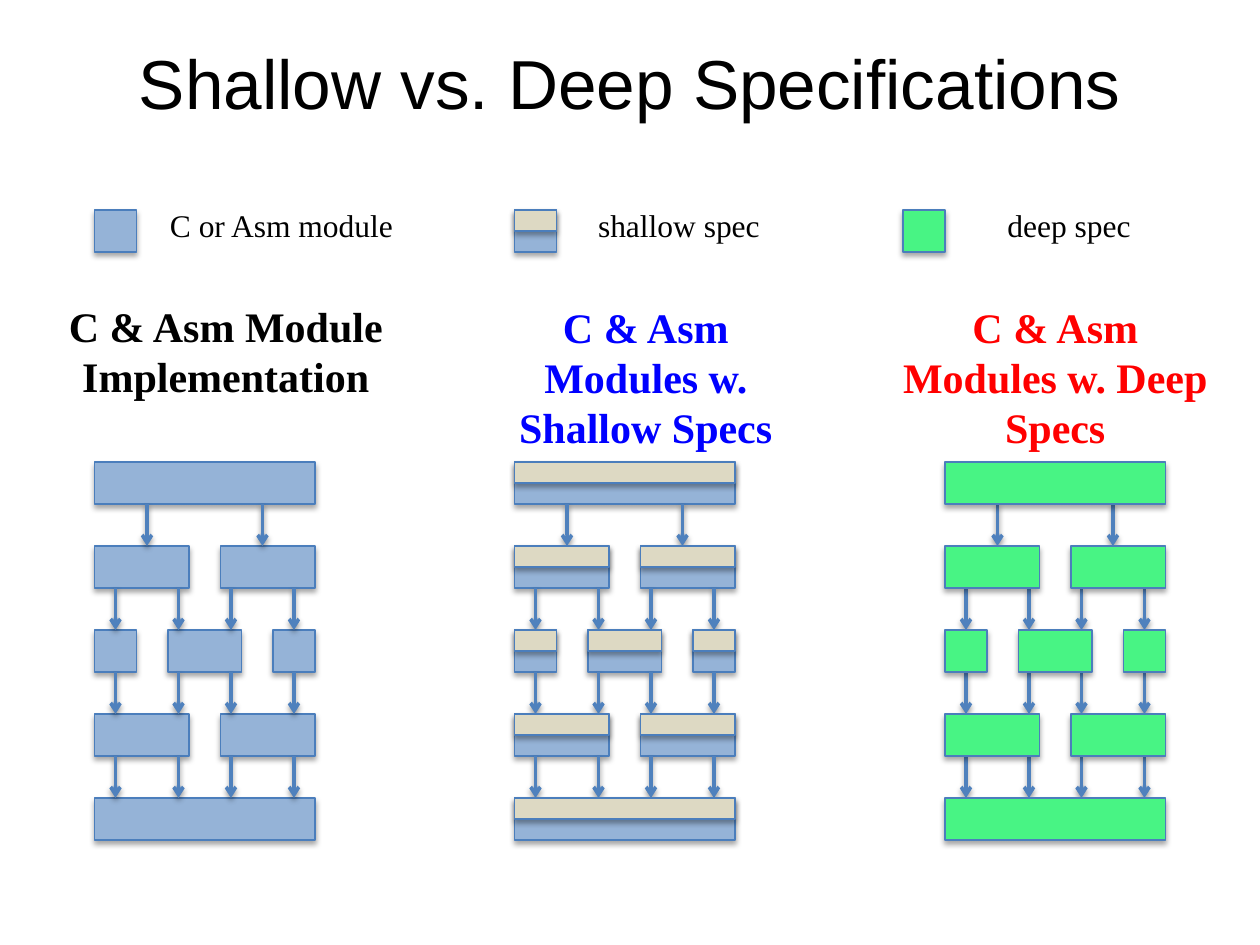
from lxml import etree
from pptx import Presentation
from pptx.dml.color import RGBColor
from pptx.enum.shapes import MSO_CONNECTOR as Connector, MSO_SHAPE as Shape
from pptx.enum.text import MSO_ANCHOR as Anchor, MSO_AUTO_SIZE as AutoSize, PP_ALIGN as Align
from pptx.oxml.ns import qn
from pptx.util import Pt

MODULE, SHALLOW, DEEP = "95B3D7", "DDD9C3", "48F484"
BOX_LINE, ARROW_LINE = "4B7EBC", "4F81BD"
FIRST_TOP, ROW_STEP, BOX_HEIGHT = 264, 48, 24

ROWS = [
    [(0, 126)],
    [(0, 54), (72, 54)],
    [(0, 24), (42, 42), (102, 24)],
    [(0, 54), (72, 54)],
    [(0, 126)],
]
CALLS = [(30, 96)] + [(12, 48, 78, 114)] * 3

COLUMNS = [
    dict(left=54, swatch=54, legend="C or Asm module", legend_box=(90, 114, 168, 29), inset=7.2,
         heading="C & Asm Module Implementation", heading_box=(30, 168, 198, 65.5),
         color="000000", fills=[MODULE]),
    dict(left=294, swatch=294, legend="shallow spec", legend_box=(330, 114, 168, 29), inset=11.7,
         heading="C & Asm Modules w. Shallow Specs", heading_box=(270, 168.5, 198, 65.5),
         color="0000FF", fills=[MODULE, SHALLOW]),
    dict(left=540, swatch=516, legend="deep spec", legend_box=(564, 114, 144, 29), inset=11.7,
         heading="C & Asm Modules w. Deep Specs", heading_box=(504, 168.5, 198, 65.5),
         color="FF0000", fills=[DEEP]),
]


def rgb(value):
    return RGBColor.from_string(value)


def write(holder, text, size, font="Times New Roman", color="000000", bold=False,
          align=Align.LEFT, anchor=Anchor.TOP, fit=AutoSize.SHAPE_TO_FIT_TEXT, inset=7.2):
    frame = holder.text_frame
    frame.text = text
    frame.word_wrap = True
    frame.auto_size = fit
    frame.vertical_anchor = anchor
    frame.margin_left = Pt(inset)
    paragraph = frame.paragraphs[0]
    paragraph.alignment = align
    letters = paragraph.runs[0].font
    letters.name, letters.size, letters.bold = font, Pt(size), bold
    letters.color.rgb = rgb(color)


deck = Presentation()
deck.slide_width, deck.slide_height = Pt(720), Pt(540)
slide = deck.slides.add_slide(deck.slide_layouts[5])

title = slide.shapes.title
title.left, title.top, title.width, title.height = Pt(36), Pt(21.6), Pt(648), Pt(50.4)
write(title, "Shallow vs. Deep Specifications", 39.6, font="Arial",
      align=Align.CENTER, anchor=Anchor.MIDDLE, fit=AutoSize.NONE)

shadowed = []
for column in COLUMNS:
    heading = slide.shapes.add_textbox(*map(Pt, column["heading_box"]))
    write(heading, column["heading"], 24, color=column["color"], bold=True, align=Align.CENTER)
    legend = slide.shapes.add_textbox(*map(Pt, column["legend_box"]))
    write(legend, column["legend"], 18, inset=column["inset"])

    diagram = slide.shapes.add_group_shape().shapes
    places = [(slide.shapes, column["swatch"], 120, 24, None)]
    for row, modules in enumerate(ROWS):
        for offset, width in modules:
            places.append((diagram, column["left"] + offset, FIRST_TOP + row * ROW_STEP, width, row))

    modules_by_center = {}
    raised = []
    for layer, fill in enumerate(column["fills"]):
        height = BOX_HEIGHT / (layer + 1)
        for canvas, left, top, width, row in places:
            module = canvas.add_shape(Shape.RECTANGLE, Pt(left), Pt(top), Pt(width), Pt(height))
            module.shadow.inherit = False
            module.fill.solid()
            module.fill.fore_color.rgb = rgb(fill)
            module.line.color.rgb = rgb(BOX_LINE)
            module.line.width = Pt(0.75)
            shadowed.append((module, 35, 1.8))
            modules_by_center.setdefault((row, left + width / 2), module)
            if fill != MODULE:
                raised.append(module)

    for row, offsets in enumerate(CALLS):
        start = FIRST_TOP + row * ROW_STEP + BOX_HEIGHT
        end = FIRST_TOP + (row + 1) * ROW_STEP
        for offset in offsets:
            x = column["left"] + offset
            call = diagram.add_connector(Connector.STRAIGHT, Pt(x), Pt(start), Pt(x), Pt(end))
            call.line.color.rgb = rgb(ARROW_LINE)
            call.line.width = Pt(2)
            etree.SubElement(call.line._get_or_add_ln(), qn("a:tailEnd"), type="arrow")
            etree.SubElement(call.element.spPr, qn("a:effectLst"))
            shadowed.append((call, 38, 1.6))
            if (row, x) in modules_by_center:
                call.begin_connect(modules_by_center[row, x], 2)
            if (row + 1, x) in modules_by_center:
                call.end_connect(modules_by_center[row + 1, x], 0)

    for module in raised:
        module.element.getparent().append(module.element)

for part, opacity, distance in shadowed:
    effects = part.element.spPr.find(qn("a:effectLst"))
    shadow = etree.SubElement(effects, qn("a:outerShdw"), blurRad=str(Pt(3.1)),
                              dist=str(Pt(distance)), dir="5400000", rotWithShape="0")
    tint = etree.SubElement(shadow, qn("a:srgbClr"), val="000000")
    etree.SubElement(tint, qn("a:alpha"), val=str(opacity * 1000))

deck.save("out.pptx")
